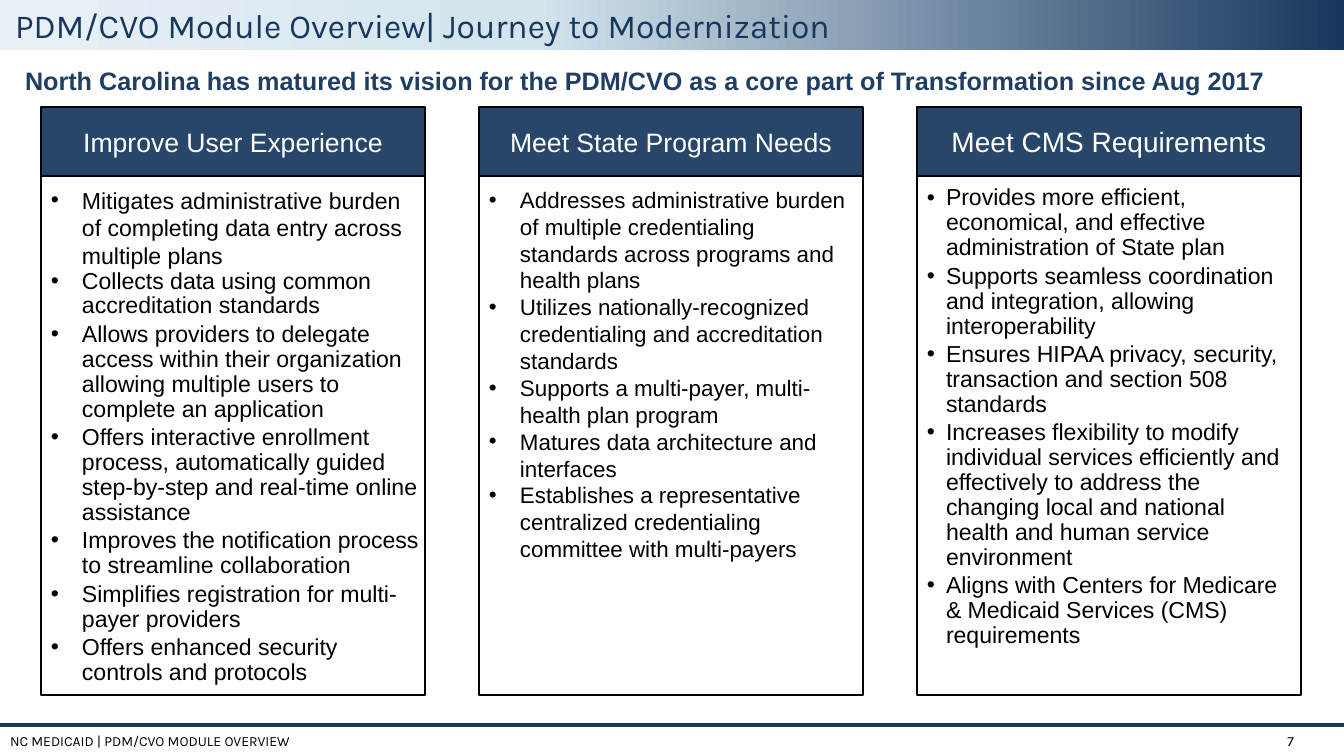
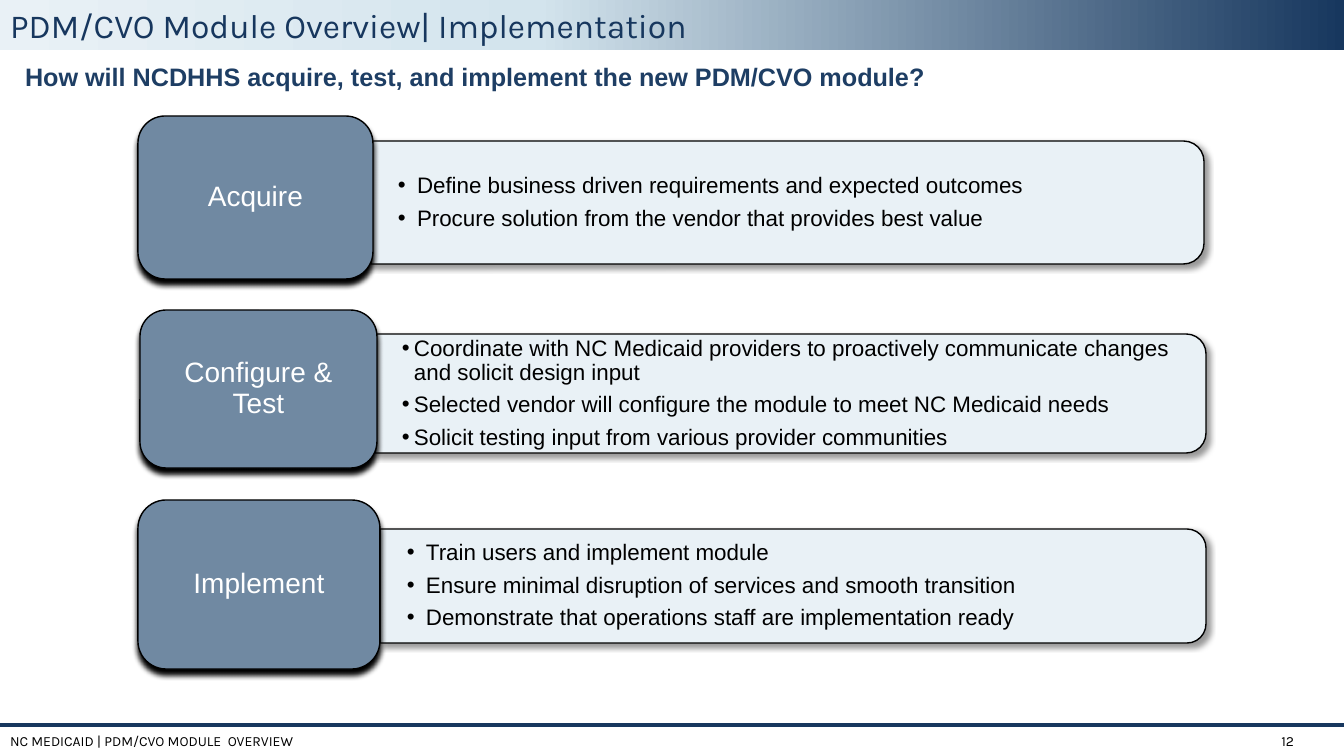
from lxml.etree import SubElement
from pptx import Presentation
from pptx.dml.color import RGBColor
from pptx.enum.shapes import MSO_CONNECTOR, MSO_SHAPE
from pptx.enum.text import MSO_ANCHOR, MSO_AUTO_SIZE, PP_ALIGN
from pptx.oxml import parse_xml
from pptx.oxml.ns import nsdecls, qn
from pptx.util import Emu, Pt

INK = {
    "navy": "17375E",
    "head": "1E3E64",
    "deep": "27466A",
    "slate": "7089A2",
    "sky": "D3E4ED",
    "pale": "E9F1F6",
    "white": "FFFFFF",
    "black": "000000",
}
WIDE, HIGH = 1344, 756
SCALE = 12192000 / WIDE
TOP, MID = MSO_ANCHOR.TOP, MSO_ANCHOR.MIDDLE
LEFT, RIGHT, CENTER = PP_ALIGN.LEFT, PP_ALIGN.RIGHT, PP_ALIGN.CENTER
FRAME = {"word_wrap": True, "auto_size": MSO_AUTO_SIZE.NONE}
PARA = {"space_before": Pt(0), "space_after": Pt(0), "line_spacing": 1.0}
TIGHT = {"space_after": Pt(2.5), "line_spacing": 0.9}
LOOSE = {"space_after": Pt(6), "line_spacing": 0.9}
EDGE = (10, 5, 10, 5)


def px(num):
    return Emu(round(num * SCALE))


def tint(name):
    return RGBColor.from_string(INK[name])


def apply(obj, vals):
    for key, val in vals.items():
        setattr(obj, key, val)


class Deck:
    def __init__(self):
        self.prs = Presentation()
        apply(self.prs, {"slide_width": px(WIDE), "slide_height": px(HIGH)})
        self.slide = None

    def page(self, title, lead, foot, num, spot, drop):
        self.slide = self.prs.slides.add_slide(self.prs.slide_layouts[4])
        self.band()
        self.rule(725)
        self.note((0, 725, 390, 31), foot, LEFT)
        self.note((1221, 725, 83, 31), num, RIGHT)
        self.hold(0, (spot, 0, 1308, 50), [title], 24, "navy", face="Karla")
        self.hold(1, (15, drop, 1288, 40), [lead], 18, "head", bold=True)

    def band(self):
        band = self.shape(MSO_SHAPE.RECTANGLE, (0, 0, WIDE, 50))
        grad = parse_xml(f'<a:gradFill {nsdecls("a")}><a:gsLst/><a:lin ang="0"/></a:gradFill>')
        for pos, name in ((0, "pale"), (40, "sky"), (100, "navy")):
            stop = SubElement(grad[0], qn("a:gs"), pos=str(pos * 1000))
            SubElement(stop, qn("a:srgbClr"), val=INK[name])
        band.element.spPr.insert(2, grad)

    def rule(self, top):
        line = self.slide.shapes.add_connector(
            MSO_CONNECTOR.STRAIGHT, px(0), px(top), px(WIDE), px(top))
        line.line.color.rgb = tint("navy")
        line.line.width = Pt(2.25)
        SubElement(line.element.spPr, qn("a:effectLst"))

    def shape(self, kind, box, fill=None, turn=0):
        item = self.slide.shapes.add_shape(kind, *map(px, box))
        item.rotation = turn
        item.shadow.inherit = False
        if fill:
            self.paint(item, fill)
        else:
            item.line.fill.background()
        return item

    def paint(self, item, fill):
        item.fill.solid()
        item.fill.fore_color.rgb = tint(fill)
        item.line.color.rgb = tint("black")
        item.line.width = Pt(1)

    def shade(self, item, alpha, dist, turn):
        glow = SubElement(item.element.spPr.find(qn("a:effectLst")), qn("a:outerShdw"),
                          blurRad=str(Pt(4)), dist=str(Pt(dist)), dir=str(turn * 60000),
                          algn="ctr", rotWithShape="0")
        tone = SubElement(glow, qn("a:srgbClr"), val=INK["black"])
        SubElement(tone, qn("a:alpha"), val=str(alpha * 1000))

    def label(self, item, lines, size, color, face="Arial", bold=False,
              align=LEFT, anchor=TOP, edge=EDGE, gaps=()):
        frame = item.text_frame
        sides = ("margin_left", "margin_top", "margin_right", "margin_bottom")
        apply(frame, FRAME | {"vertical_anchor": anchor} | dict(zip(sides, map(px, edge))))
        frame.text = "\n".join(lines)
        for spot, para in enumerate(frame.paragraphs):
            gap = gaps[min(spot, len(gaps) - 1)] if gaps else {}
            apply(para, PARA | {"alignment": align} | gap)
            for run in para.runs:
                apply(run.font, {"name": face, "size": Pt(size), "bold": bold})
                run.font.color.rgb = tint(color)

    def note(self, box, text, align):
        item = self.slide.shapes.add_textbox(*map(px, box))
        self.label(item, [text], 10, "black", "Karla", align=align, anchor=MID)

    def hold(self, slot, box, lines, size, color, dent=0, **form):
        item = self.slide.placeholders[slot]
        apply(item, dict(zip(("left", "top", "width", "height"), map(px, box))))
        self.label(item, lines, size, color, **form)
        for para in item.element.iter(qn("a:p")):
            prop = para.get_or_add_pPr()
            prop.set("marL", str(px(dent)))
            prop.set("indent", str(-px(dent)))
            if dent:
                SubElement(prop, qn("a:buChar"), char="•")
            else:
                SubElement(prop, qn("a:buNone"))
        self.slide.shapes.element.append(item.element)
        return item

    def column(self, slot, left, head, size, lines, form):
        cap = self.shape(MSO_SHAPE.RECTANGLE, (left, 107, 384, 69), "deep")
        self.label(cap, [head], size, "white", align=CENTER, anchor=MID)
        body = self.hold(slot, (left, 176, 384, 519), lines, color="black", **form)
        self.paint(body, "white")

    def step(self, slot, card, bar, name, lines, dent):
        left, top, wide, high = bar
        lean = (wide - high) // 2
        back = self.shape(MSO_SHAPE.ROUND_2_SAME_RECTANGLE,
                          (left + lean, top - lean, high, wide), "pale", 90)
        self.shade(back, 40, 3, 45)
        self.hold(slot, bar, lines, 16, "black", dent,
                  anchor=MID, edge=(27, 5, 27, 5), gaps=[LOOSE])
        front = self.shape(MSO_SHAPE.ROUNDED_RECTANGLE, card, "slate")
        self.shade(front, 100, 4, 90)
        self.label(front, [name], 20, "white", align=CENTER, anchor=MID,
                   edge=(16, 12, 16, 12), gaps=[{"line_spacing": 0.9}])


COLUMNS = [
    ("Improve User Experience", 19, [
        "Mitigates administrative burden of completing data entry across multiple plans",
        "Collects data using common accreditation standards",
        "Allows providers to delegate access within their organization allowing multiple users to complete an application",
        "Offers interactive enrollment process, automatically guided step-by-step and real-time online assistance",
        "Improves the notification process to streamline collaboration",
        "Simplifies registration for multi-payer providers",
        "Offers enhanced security controls and protocols",
    ], {"size": 16.5, "dent": 31, "edge": (10, 10, 3, 15), "gaps": [{}, TIGHT]}),
    ("Meet State Program Needs", 19, [
        "Addresses administrative burden of multiple credentialing standards across programs and health plans",
        "Utilizes nationally-recognized credentialing and accreditation standards",
        "Supports a multi-payer, multi-health plan program",
        "Matures data architecture and interfaces",
        "Establishes a representative centralized credentialing committee with multi-payers",
    ], {"size": 16, "dent": 31, "edge": (10, 10, 13, 15)}),
    ("Meet CMS Requirements", 20, [
        "Provides more efficient, economical, and effective administration of State plan",
        "Supports seamless coordination and integration, allowing interoperability",
        "Ensures HIPAA privacy, security, transaction and section 508 standards",
        "Increases flexibility to modify individual services efficiently and effectively to address the changing local and national health and human service environment",
        "Aligns with Centers for Medicare & Medicaid Services (CMS) requirements",
    ], {"size": 16.5, "dent": 19, "edge": (10, 10, 13, 15), "gaps": [TIGHT]}),
]
STEPS = [
    ((138, 116, 235, 163), (371, 141, 833, 123), "Acquire", [
        "Define business driven requirements and expected outcomes",
        "Procure solution from the vendor that provides best value",
    ], 19),
    ((140, 310, 237, 158), (375, 334, 831, 119), "Configure & Test", [
        "Coordinate with NC Medicaid providers to proactively communicate changes and solicit design input",
        "Selected vendor will configure the module to meet NC Medicaid needs",
        "Solicit testing input from various provider communities",
    ], 12),
    ((138, 500, 242, 169), (380, 529, 826, 114), "Implement", [
        "Train users and implement module",
        "Ensure minimal disruption of services and smooth transition",
        "Demonstrate that operations staff are implementation ready",
    ], 19),
]


def main():
    deck = Deck()
    deck.page("PDM/CVO Module Overview| Journey to Modernization",
              "North Carolina has matured its vision for the PDM/CVO as a core part of Transformation since Aug 2017",
              "NC MEDICAID | PDM/CVO MODULE OVERVIEW", "7", 5, 60)
    for slot, (head, size, lines, form) in enumerate(COLUMNS):
        deck.column(slot + 2, 41 + 438 * slot, head, size, lines, form)
    deck.page("PDM/CVO Module Overview| Implementation",
              "How will NCDHHS acquire, test, and implement the new PDM/CVO module?",
              "NC MEDICAID | PDM/CVO MODULE  OVERVIEW", "12", 0, 56)
    for slot, (card, bar, name, lines, dent) in enumerate(STEPS, 2):
        deck.step(slot, card, bar, name, lines, dent)
    deck.prs.save("out.pptx")


if __name__ == "__main__":
    main()
